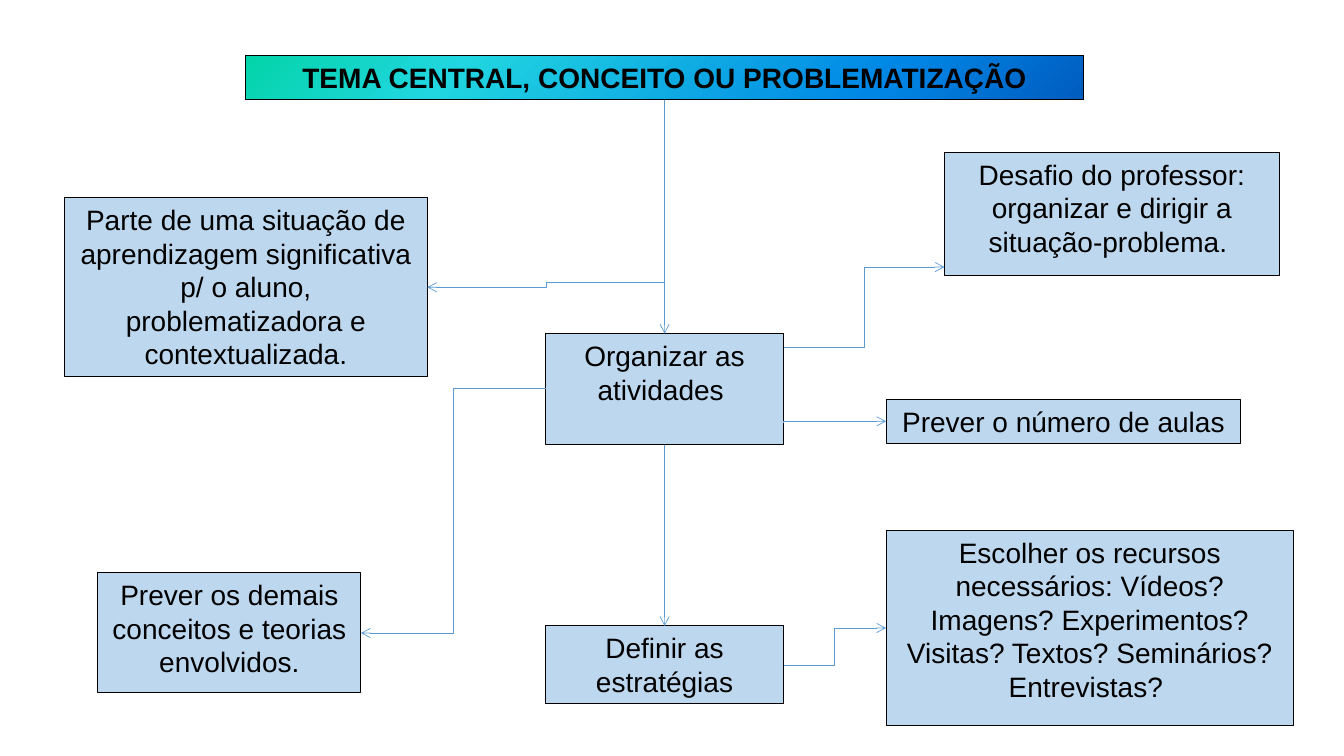
from lxml.etree import SubElement
from pptx import Presentation
from pptx.dml.color import RGBColor
from pptx.enum.shapes import MSO_CONNECTOR, MSO_SHAPE
from pptx.enum.text import MSO_ANCHOR, PP_ALIGN
from pptx.oxml.ns import qn
from pptx.util import Inches, Pt

WIDTH, HEIGHT = Inches(13.33), Inches(7.5)
COLORS = {"box": "BDD7EE", "ink": "000000", "arrow": "5B9BD5"}
THEME_STOPS = [(0, "03D4A8"), (25, "21D6E0"), (75, "0087E6"), (100, "005CBF")]
TOP, LEFT, BOTTOM, RIGHT = range(4)

TITLE = ("TEMA CENTRAL, CONCEITO OU PROBLEMATIZAÇÃO", (18.3, 7.33, 62.3, 5.87))
ACTIVITIES = ("Organizar as atividades ", (40.6, 44.13, 17.7, 14.67))
STRATEGIES = ("Definir as estratégias", (40.6, 82.8, 17.7, 10.27))
SIDE_BOXES = [
    ("Escolher os recursos necessários: Vídeos? Imagens? Experimentos? "
     "Visitas? Textos? Seminários? Entrevistas? ", (65.93, 70.13, 30.3, 25.87)),
    ("Prever o número de aulas", (65.93, 52.8, 26.4, 5.87)),
    ("Prever os demais conceitos e teorias envolvidos.",
     (7.28, 75.73, 19.58, 15.87)),
    ("Parte de uma situação de aprendizagem significativa p/ o aluno, "
     "problematizadora e contextualizada.", (4.8, 26.13, 27, 23.73)),
    ("Desafio do professor: organizar e dirigir a situação-problema. ",
     (70.28, 20.13, 24.9, 16.27)),
]
ELBOWS = [
    ((58.3, 88), (65.93, 83.07), 50),
    ((58.3, 56), (65.93, 55.73), 0),
    ((40.6, 51.4), (26.86, 83.73), 50),
    ((49.45, 37.4), (31.8, 38), 50),
    ((58.3, 45.93), (70.28, 35.33), 50),
]


def place(x, y):
    """Turn percentages of the slide's width and height into lengths."""
    return round(WIDTH * x / 100), round(HEIGHT * y / 100)


def add_box(slide, text, area, bold=False):
    """Add an outlined rectangle with centred text."""
    x, y, w, h = area
    sp = slide.shapes.add_shape(MSO_SHAPE.RECTANGLE, *place(x, y), *place(w, h))
    sp.shadow.inherit = False
    sp.fill.solid()
    sp.fill.fore_color.rgb = RGBColor.from_string(COLORS["box"])
    sp.line.color.rgb = RGBColor.from_string(COLORS["ink"])
    sp.line.width = Pt(0.75)
    tf = sp.text_frame
    tf.word_wrap = True
    tf.vertical_anchor = MSO_ANCHOR.TOP
    tf.text = text
    p = tf.paragraphs[0]
    p.alignment = PP_ALIGN.CENTER
    font = p.runs[0].font
    font.name, font.size, font.bold = "Arial", Pt(20), bold
    font.color.rgb = RGBColor.from_string(COLORS["ink"])
    return sp


def set_gradient(sp, stops):
    """Fill a shape with a diagonal gradient of any number of stops."""
    sp.fill.gradient()
    sp.fill.gradient_angle = 315
    gs_list = sp.element.spPr.find(qn("a:gradFill")).find(qn("a:gsLst"))
    for gs in list(gs_list):
        gs_list.remove(gs)
    for percent, color in stops:
        gs = SubElement(gs_list, qn("a:gs"), pos=str(percent * 1000))
        SubElement(gs, qn("a:srgbClr"), val=color)


def add_arrow(slide, kind, start=(0, 0), end=(0, 0)):
    """Add a thin connector with an open arrowhead at its end."""
    line = slide.shapes.add_connector(kind, *place(*start), *place(*end))
    line.line.color.rgb = RGBColor.from_string(COLORS["arrow"])
    line.line.width = Pt(0.5)
    SubElement(line.line._get_or_add_ln(), qn("a:tailEnd"), type="arrow")
    SubElement(line._element.spPr, qn("a:effectLst"))
    return line


def add_down_arrow(slide, upper, lower):
    """Join the bottom of one box to the top of another."""
    line = add_arrow(slide, MSO_CONNECTOR.STRAIGHT)
    line.begin_connect(upper, BOTTOM)
    line.end_connect(lower, TOP)


def add_elbow(slide, start, end, bend):
    """Add a bent arrow that turns at a percentage of its width."""
    line = add_arrow(slide, MSO_CONNECTOR.ELBOW, start, end)
    geom = line._element.spPr.find(qn("a:prstGeom"))
    guides = geom.find(qn("a:avLst"))
    if guides is None:
        guides = SubElement(geom, qn("a:avLst"))
    SubElement(guides, qn("a:gd"), name="adj1", fmla=f"val {bend * 1000}")


def main():
    """Build the slide and save it."""
    prs = Presentation()
    prs.slide_width, prs.slide_height = WIDTH, HEIGHT
    slide = prs.slides.add_slide(prs.slide_layouts[6])
    title = add_box(slide, *TITLE, bold=True)
    set_gradient(title, THEME_STOPS)
    activities = add_box(slide, *ACTIVITIES)
    strategies = add_box(slide, *STRATEGIES)
    add_down_arrow(slide, title, activities)
    add_down_arrow(slide, activities, strategies)
    for text, area in SIDE_BOXES:
        add_box(slide, text, area)
    for start, end, bend in ELBOWS:
        add_elbow(slide, start, end, bend)
    prs.save("out.pptx")


if __name__ == "__main__":
    main()
